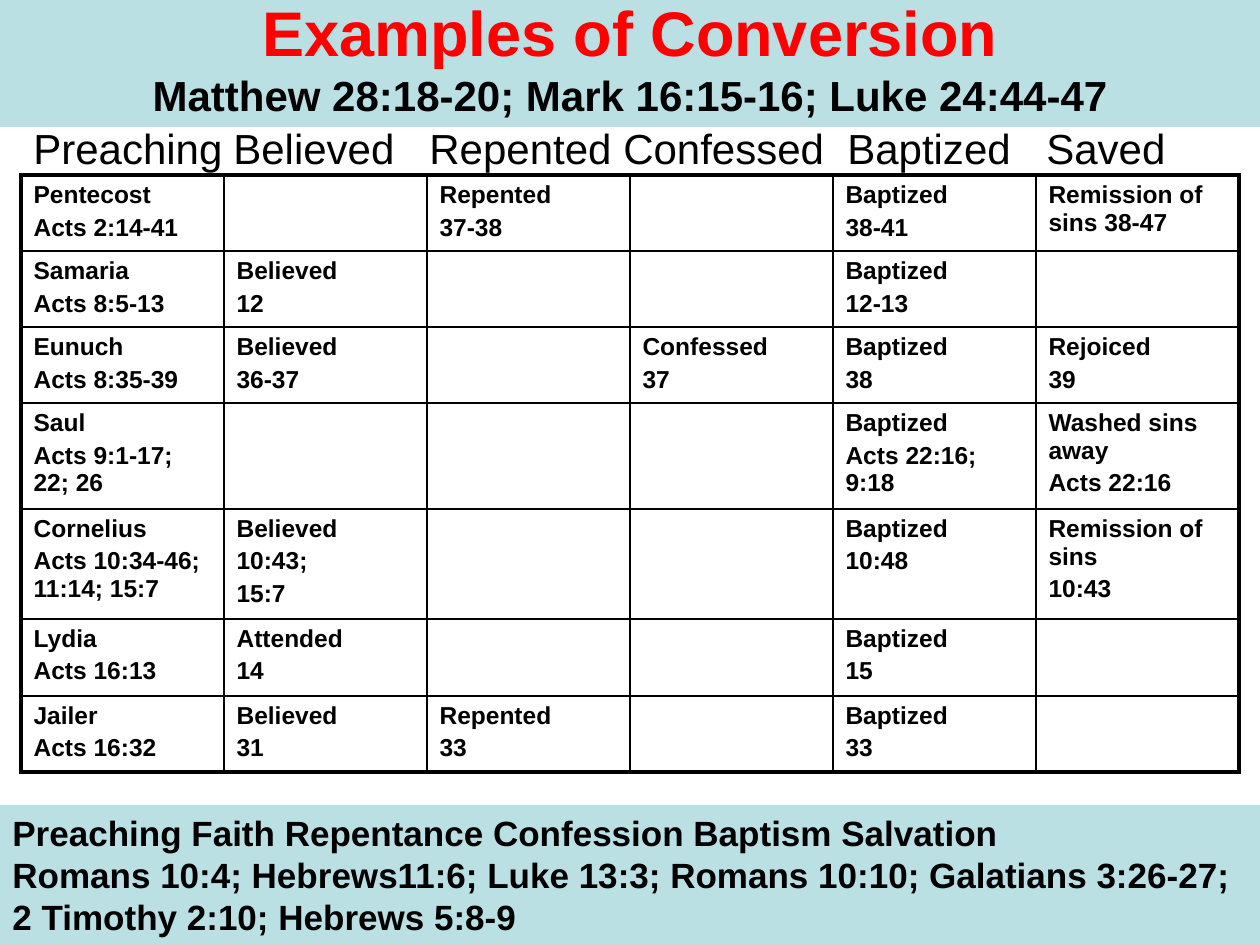
from lxml import etree
from pptx import Presentation
from pptx import util as u
from pptx.dml.color import RGBColor
from pptx.enum import shapes, text
from pptx.oxml.ns import qn

PX = 914400 // 126
BLACK = RGBColor(0, 0, 0)
RED = RGBColor(255, 0, 0)
AQUA = RGBColor(0xBB, 0xE0, 0xE3)

COLUMN_WIDTH = 203
ROW_HEIGHTS = [76, 76, 76, 106, 110, 77, 76]
HEADINGS = "Preaching\tBelieved\tRepented\tConfessed\tBaptized\tSaved"
HEADING_STOPS = [200, 396, 590, 814, 1013]
CONVERSIONS = [
    ["Pentecost|Acts 2:14-41", "", "Repented|37-38", "", "Baptized|38-41", "Remission of sins 38-47"],
    ["Samaria|Acts 8:5-13", "Believed|12", "", "", "Baptized|12-13", ""],
    ["Eunuch|Acts 8:35-39", "Believed|36-37", "", "Confessed|37", "Baptized|38", "Rejoiced|39"],
    ["Saul|Acts 9:1-17; 22; 26", "", "", "", "Baptized|Acts 22:16; 9:18", "Washed sins away|Acts 22:16"],
    ["Cornelius|Acts 10:34-46; 11:14; 15:7", "Believed|10:43;|15:7", "", "", "Baptized|10:48",
     "Remission of sins|10:43"],
    ["Lydia|Acts 16:13", "Attended|14", "", "", "Baptized|15", ""],
    ["Jailer|Acts 16:32", "Believed|31", "Repented|33", "", "Baptized|33", ""],
]


def write(para, content, size=14, color=BLACK, bold=True, align=text.PP_ALIGN.LEFT, before=0):
    para.alignment = align
    para.space_before = u.Pt(before)
    for number, line in enumerate(content.split("\n")):
        if number:
            para.add_line_break()
        span = para.add_run()
        span.text = line
        span.font.name = "Arial"
        span.font.size = u.Pt(size)
        span.font.bold = bold
        span.font.color.rgb = color


def set_border(cell, side, points):
    line = etree.SubElement(cell._tc.get_or_add_tcPr(), qn(f"a:ln{side}"), w=str(u.Pt(points)))
    fill = etree.SubElement(line, qn("a:solidFill"))
    etree.SubElement(fill, qn("a:srgbClr"), val=str(BLACK))


class Board:
    """Draws bands, headings and grids on one slide."""

    def __init__(self, slide):
        self.slide = slide

    def place(self, *lengths):
        return [length * PX for length in lengths]

    def band(self, top, height, anchor):
        box = self.slide.shapes.add_shape(
            shapes.MSO_SHAPE.RECTANGLE, *self.place(0, top, 1260, height))
        box.shadow.inherit = False
        box.fill.solid()
        box.fill.fore_color.rgb = AQUA
        box.line.fill.background()
        box.text_frame.word_wrap = True
        box.text_frame.vertical_anchor = anchor
        return box.text_frame

    def headings(self, left, top, width, height, content, stops):
        box = self.slide.shapes.add_textbox(*self.place(left, top, width, height))
        box.text_frame.word_wrap = True
        para = box.text_frame.paragraphs[0]
        write(para, content, size=24, bold=False)
        tabs = etree.SubElement(para._p.get_or_add_pPr(), qn("a:tabLst"))
        for stop in stops:
            etree.SubElement(tabs, qn("a:tab"), pos=str(stop * PX), algn="l")

    def grid(self, left, top, rows, column_width, row_heights):
        last_row, last_column = len(rows) - 1, len(rows[0]) - 1
        frame = self.slide.shapes.add_table(
            len(rows), len(rows[0]),
            *self.place(left, top, column_width * len(rows[0]), sum(row_heights)))
        table = frame.table
        table.first_row = table.horz_banding = False
        for column in table.columns:
            column.width = column_width * PX
        for r, row in enumerate(rows):
            table.rows[r].height = row_heights[r] * PX
            for c, content in enumerate(row):
                cell = table.cell(r, c)
                outer = {"L": c == 0, "R": c == last_column, "T": r == 0, "B": r == last_row}
                for side, is_outer in outer.items():
                    set_border(cell, side, 2.25 if is_outer else 1)
                cell.fill.background()
                for number, line in enumerate(content.split("|")):
                    paras = cell.text_frame
                    para = paras.add_paragraph() if number else paras.paragraphs[0]
                    if line:
                        write(para, line, before=2.8)


def main():
    deck = Presentation()
    deck.slide_width, deck.slide_height = u.Inches(10), u.Inches(7.5)
    board = Board(deck.slides.add_slide(deck.slide_layouts[6]))

    title = board.band(-13, 140, text.MSO_ANCHOR.MIDDLE).paragraphs[0]
    center = text.PP_ALIGN.CENTER
    write(title, "Examples of Conversion", size=36, color=RED, align=center)
    title.add_line_break()
    write(title, "Matthew 28:18-20; Mark 16:15-16; Luke 24:44-47", size=24, align=center)

    board.grid(21, 175, CONVERSIONS, COLUMN_WIDTH, ROW_HEIGHTS)
    board.headings(21, 116, 1239, 63, HEADINGS, HEADING_STOPS)

    footer = board.band(805, 140, text.MSO_ANCHOR.TOP)
    write(footer.paragraphs[0], "Preaching Faith Repentance Confession Baptism Salvation", size=20)
    write(footer.add_paragraph(),
          "Romans 10:4; Hebrews11:6; Luke 13:3; Romans 10:10; Galatians 3:26-27;\n"
          "2 Timothy 2:10; Hebrews 5:8-9", size=20)
    deck.save("out.pptx")


if __name__ == "__main__":
    main()
